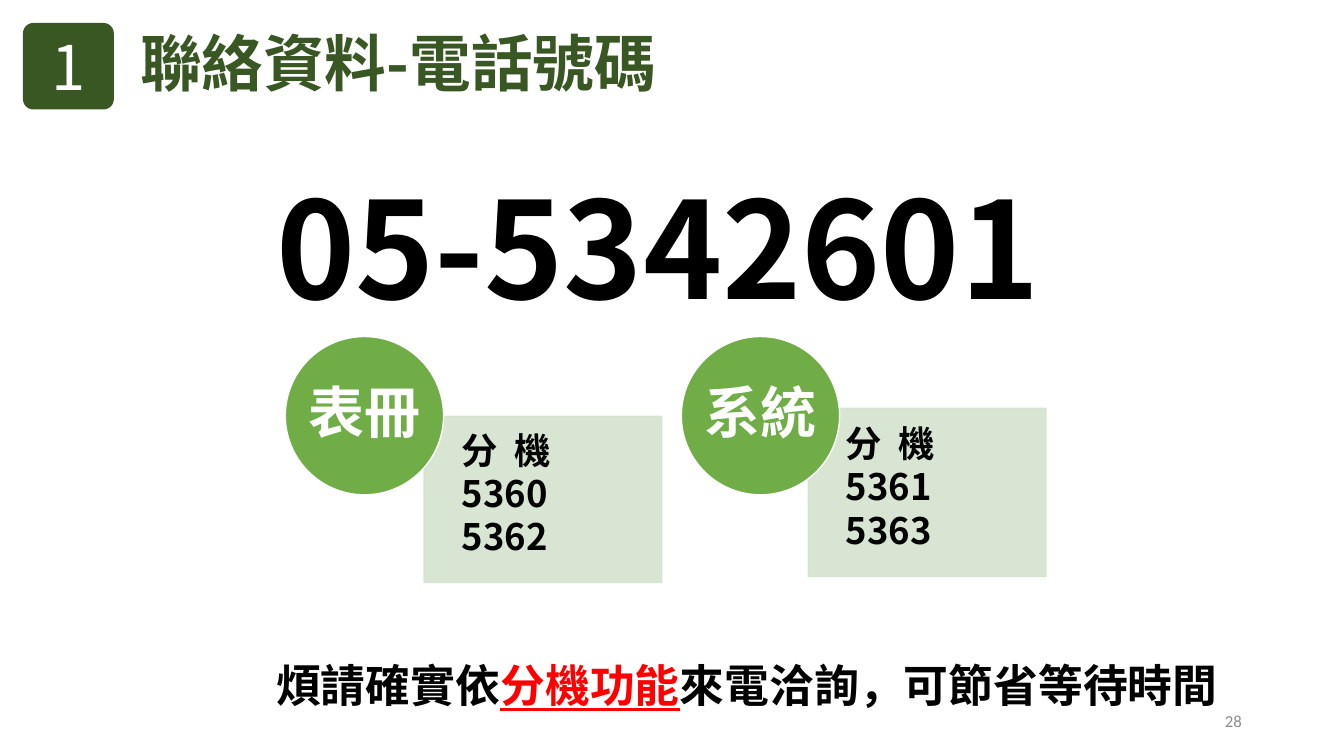
"""Build the contact slide with the phone number and its extensions."""
from lxml import etree
from pptx import Presentation
from pptx.dml.color import RGBColor
from pptx.enum.shapes import MSO_SHAPE
from pptx.enum.text import MSO_ANCHOR, PP_ALIGN
from pptx.oxml.ns import qn
from pptx.util import Cm, Pt

FONT = "Noto Sans CJK SC"
DARK, GREEN, PALE = "385723", "70AD47", "D5E3CF"


def add_box(s, box, kind=None, fill=None, line=None, alpha=None, insets=None, anchor=MSO_ANCHOR.MIDDLE):
    """Add a text box, or a filled shape when a kind is given."""
    box = [Cm(v) for v in box]
    if kind is None:
        sp = s.shapes.add_textbox(*box)
    else:
        sp = s.shapes.add_shape(kind, *box)
        sp.shadow.inherit = False
        sp.fill.solid()
        sp.fill.fore_color.rgb = RGBColor.from_string(fill)
        if line:
            sp.line.color.rgb = RGBColor.from_string(line)
            sp.line.width = Pt(1)
        else:
            sp.line.fill.background()
        if alpha:
            for clr in sp._element.spPr.iter(qn("a:srgbClr")):
                etree.SubElement(clr, qn("a:alpha")).set("val", str(alpha * 1000))
    tf = sp.text_frame
    tf.word_wrap = True
    tf.vertical_anchor = anchor
    if insets:
        tf.margin_left, tf.margin_top, tf.margin_right, tf.margin_bottom = [Cm(v) for v in insets]
    return sp


def add_par(tf, runs, size, bold=True, font=FONT, align=PP_ALIGN.LEFT, spacing=None, before=None, after=None):
    """Write one paragraph from (text, colour, underlined) runs."""
    p = tf.paragraphs[0] if not tf.paragraphs[0].runs else tf.add_paragraph()
    p.alignment = align
    p.line_spacing, p.space_before, p.space_after = spacing, before, after
    for text, color, underlined in runs:
        r = p.add_run()
        r.text = text
        r.font.size = Pt(size)
        r.font.bold = bold
        r.font.name = font
        r.font.underline = underlined
        r.font.color.rgb = RGBColor.from_string(color)
        etree.SubElement(r.font._element, qn("a:ea")).set("typeface", font)


prs = Presentation()
prs.slide_width, prs.slide_height = Cm(33.87), Cm(19.05)
s = prs.slides.add_slide(prs.slide_layouts[6])

title = add_box(s, (3.28, 0.61, 21.89, 2.13))
add_par(title.text_frame, [("聯絡資料-電話號碼", DARK, False)], 44, spacing=0.9, before=Pt(10))

badge = add_box(s, (0.58, 0.58, 2.29, 2.18), MSO_SHAPE.ROUNDED_RECTANGLE, DARK)
badge.adjustments[0] = 0.12
add_par(badge.text_frame, [("1", "FFFFFF", False)], 44, bold=False, align=PP_ALIGN.CENTER)

phone = add_box(s, (6.71, 4.01, 20.45, 4.39))
add_par(phone.text_frame, [("05-5342601", "000000", False)], 96)

note = add_box(s, (6.71, 15.52, 25.37, 2.57), anchor=MSO_ANCHOR.TOP)
add_par(note.text_frame, [
    ("煩請確實依", "000000", False),
    ("分機功能", "FF0000", True),
    ("來電洽詢，可節省等待時間", "000000", False),
], 32, spacing=Pt(65))

desks = [
    ("表冊", 7.19, (10.69, 10.49, 5.99, 4.19), ["5360", "5362"]),
    ("系統", 17.17, (20.37, 10.29, 5.99, 4.24), ["5361", "5363"]),
]
for name, left, panel_box, extensions in desks:
    panel = add_box(s, panel_box, MSO_SHAPE.RECTANGLE, PALE, PALE, 90, (0.95, 0.51, 0.51, 0.51))
    for text in ["分  機"] + extensions:
        add_par(panel.text_frame, [(text, "000000", False)], 26, spacing=Pt(22), after=Pt(9))
    circle = add_box(s, (left, 8.48, 3.99, 3.99), MSO_SHAPE.OVAL, GREEN, "FFFFFF", insets=(0, 0, 0, 0))
    add_par(circle.text_frame, [(name, "FFFFFF", False)], 40, align=PP_ALIGN.CENTER, spacing=0.9, after=Pt(14))

number = add_box(s, (23.93, 17.65, 7.62, 1.02))
add_par(number.text_frame, [("28", "8C8C8C", False)], 12, bold=False, font="Calibri", align=PP_ALIGN.RIGHT)

prs.save("out.pptx")
